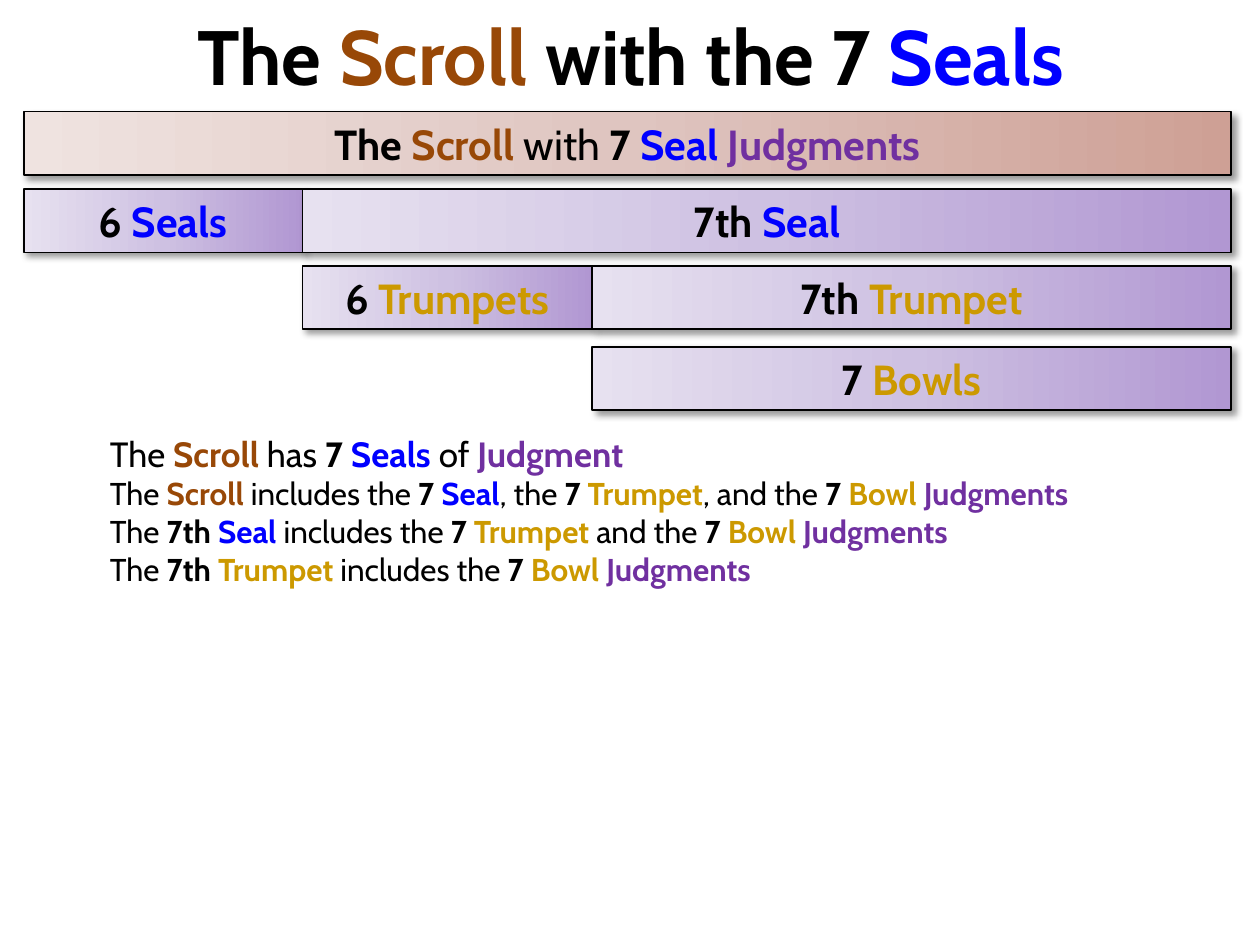
from copy import deepcopy
from dataclasses import dataclass

from lxml.etree import SubElement
from pptx import Presentation
from pptx.dml.color import RGBColor
from pptx.enum.shapes import MSO_SHAPE
from pptx.enum.text import MSO_ANCHOR, MSO_AUTO_SIZE, PP_ALIGN
from pptx.oxml.ns import qn
from pptx.util import Cm, Pt

BLACK = RGBColor(0x00, 0x00, 0x00)
BROWN = RGBColor(0x98, 0x48, 0x07)
BLUE = RGBColor(0x00, 0x00, 0xFF)
GOLD = RGBColor(0xCC, 0x99, 0x00)
PURPLE = RGBColor(0x70, 0x30, 0xA0)
LILAC_FADE = (RGBColor(0xB1, 0x97, 0xD2), RGBColor(0xCE, 0xC1, 0xE2), RGBColor(0xE7, 0xE1, 0xF0))
CLAY_FADE = (RGBColor(0xCE, 0xA0, 0x95), RGBColor(0xDF, 0xC5, 0xC0), RGBColor(0xEF, 0xE3, 0xE0))

FONT = "Cabin"
LEFT, SEAL_SPLIT, TRUMPET_SPLIT, RIGHT = 0.48, 6.1, 11.94, 24.82
SCROLL_TOP, SEAL_TOP, TRUMPET_TOP, BOWL_TOP = 2.25, 3.81, 5.36, 6.99
BAR_HEIGHT = 1.28


@dataclass(frozen=True)
class Phrase:
    text: str
    color: RGBColor = BLACK
    bold: bool = True


@dataclass(frozen=True)
class Bar:
    left: float
    right: float
    top: float
    phrases: tuple
    fade: tuple = LILAC_FADE


def plain(text: str) -> Phrase:
    return Phrase(text, bold=False)


SEVEN = Phrase("7 ")
SEVENTH = Phrase("7th ")
SIX = Phrase("6 ")
SCROLL = Phrase("Scroll", BROWN)
SEAL = Phrase("Seal", BLUE)
SEALS = Phrase("Seals", BLUE)
TRUMPET = Phrase("Trumpet", GOLD)
JUDGMENTS = Phrase("Judgments", PURPLE)
BOWL_JUDGMENTS = (SEVEN, Phrase("Bowl ", GOLD), JUDGMENTS)

TITLE = (Phrase("The "), Phrase("Scroll ", BROWN), Phrase("with the 7 "), SEALS)

BARS = (
    Bar(LEFT, SEAL_SPLIT, SEAL_TOP, (SIX, SEALS)),
    Bar(SEAL_SPLIT, RIGHT, SEAL_TOP, (SEVENTH, SEAL)),
    Bar(SEAL_SPLIT, TRUMPET_SPLIT, TRUMPET_TOP, (SIX, Phrase("Trumpets", GOLD))),
    Bar(TRUMPET_SPLIT, RIGHT, BOWL_TOP, (SEVEN, Phrase("Bowls", GOLD))),
    Bar(TRUMPET_SPLIT, RIGHT, TRUMPET_TOP, (SEVENTH, TRUMPET)),
    Bar(LEFT, RIGHT, SCROLL_TOP,
        (Phrase("The "), SCROLL, plain(" with "), SEVEN, Phrase("Seal ", BLUE), JUDGMENTS),
        CLAY_FADE),
)

STATEMENTS = (
    (20, (plain("The "), SCROLL, plain(" has "), SEVEN, SEALS, plain(" of "),
          Phrase("Judgment", PURPLE))),
    (18, (plain("The "), SCROLL, plain(" includes the "), SEVEN, SEAL, plain(", the "),
          SEVEN, TRUMPET, plain(", and the "), *BOWL_JUDGMENTS)),
    (18, (plain("The "), SEVENTH, SEAL, plain(" includes the "), SEVEN, TRUMPET,
          plain(" and the "), *BOWL_JUDGMENTS)),
    (18, (plain("The "), SEVENTH, TRUMPET, plain(" includes the "), *BOWL_JUDGMENTS)),
)


def write_phrases(paragraph, phrases: tuple, size: int, alignment: PP_ALIGN) -> None:
    paragraph.alignment = alignment
    for phrase in phrases:
        run = paragraph.add_run()
        run.text = phrase.text
        run.font.name = FONT
        run.font.size = Pt(size)
        run.font.bold = phrase.bold
        run.font.color.rgb = phrase.color


def place(shape, left: float, top: float, width: float, height: float) -> None:
    shape.left, shape.top = Cm(left), Cm(top)
    shape.width, shape.height = Cm(width), Cm(height)


def fill_with_fade(shape, fade: tuple) -> None:
    shape.fill.gradient()
    shape.fill.gradient_angle = 180
    stop_list = shape.element.spPr.find(qn("a:gradFill")).find(qn("a:gsLst"))
    stop_list.insert(1, deepcopy(stop_list[0]))
    for stop, color, position in zip(shape.fill.gradient_stops, fade, (0, 0.5, 1)):
        stop.color.rgb = color
        stop.position = position


def add_shadow(shape) -> None:
    shape.shadow.inherit = False
    effects = shape.element.spPr.find(qn("a:effectLst"))
    shadow = SubElement(effects, qn("a:outerShdw"), blurRad=str(Pt(4)), dist=str(Pt(3)),
                        dir=str(45 * 60000), algn="tl", rotWithShape="0")
    color = SubElement(shadow, qn("a:srgbClr"), val=str(BLACK))
    SubElement(color, qn("a:alpha"), val="40000")


def add_bar(slide, bar: Bar) -> None:
    shape = slide.shapes.add_shape(
        MSO_SHAPE.RECTANGLE, Cm(bar.left), Cm(bar.top),
        Cm(bar.right - bar.left), Cm(BAR_HEIGHT))
    fill_with_fade(shape, bar.fade)
    shape.line.color.rgb = BLACK
    shape.line.width = Pt(1)
    add_shadow(shape)
    frame = shape.text_frame
    frame.word_wrap = True
    frame.vertical_anchor = MSO_ANCHOR.MIDDLE
    write_phrases(frame.paragraphs[0], bar.phrases, 24, PP_ALIGN.CENTER)


def write_title(title) -> None:
    place(title, 1.22, 0.03, 22.99, 2.13)
    title.text_frame.vertical_anchor = MSO_ANCHOR.MIDDLE
    title.text_frame.auto_size = MSO_AUTO_SIZE.NONE
    write_phrases(title.text_frame.paragraphs[0], TITLE, 44, PP_ALIGN.CENTER)


def write_statements(body) -> None:
    place(body, 1.96, 8.59, 22.23, 3.43)
    frame = body.text_frame
    frame.auto_size = MSO_AUTO_SIZE.NONE
    for index, (size, phrases) in enumerate(STATEMENTS):
        paragraph = frame.add_paragraph() if index else frame.paragraphs[0]
        paragraph.space_before = Pt(0)
        write_phrases(paragraph, phrases, size, PP_ALIGN.LEFT)
        properties = paragraph._p.get_or_add_pPr()
        properties.set("marL", "0")
        properties.set("indent", "0")
        SubElement(properties, qn("a:buNone"))


def main() -> None:
    presentation = Presentation()
    presentation.slide_width, presentation.slide_height = Cm(25.4), Cm(19.05)
    slide = presentation.slides.add_slide(presentation.slide_layouts[1])
    write_title(slide.shapes.title)
    for bar in BARS:
        add_bar(slide, bar)
    write_statements(slide.placeholders[1])
    presentation.save("out.pptx")


if __name__ == "__main__":
    main()
